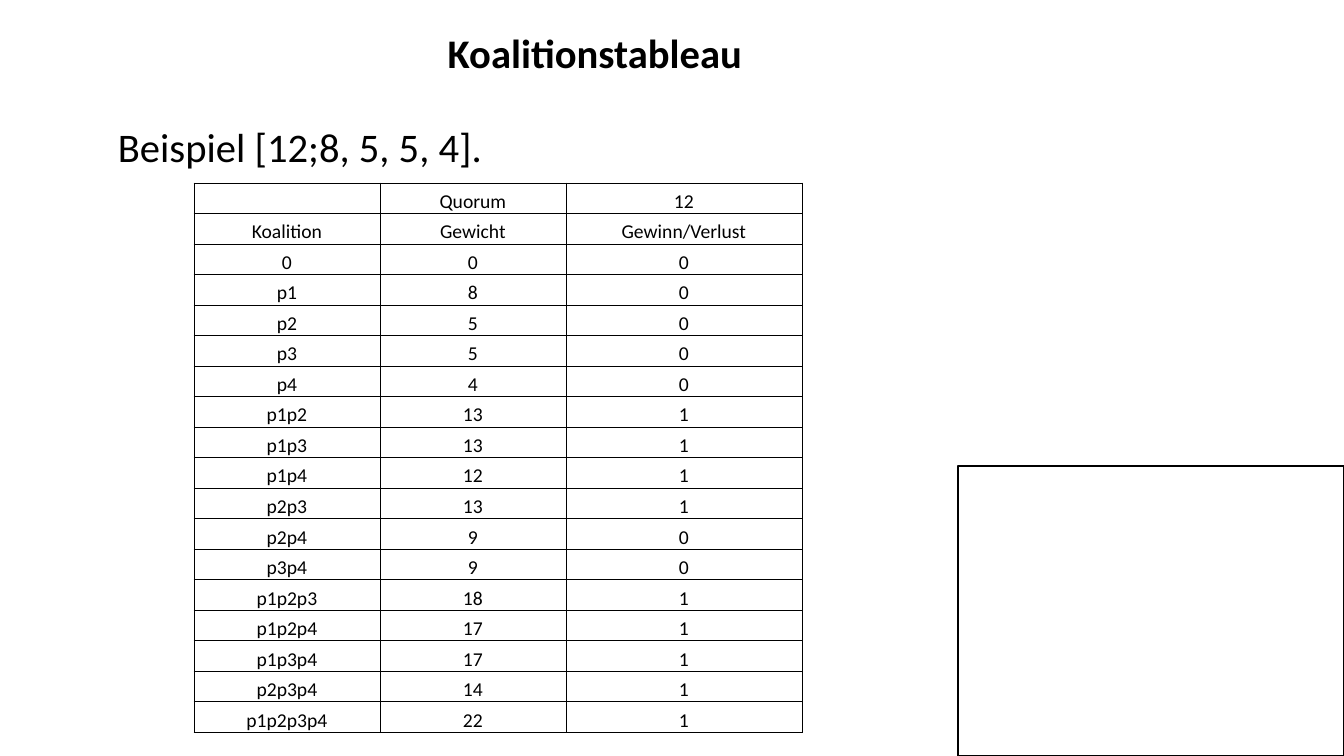
from lxml.etree import SubElement
from pptx import Presentation
from pptx.dml.color import RGBColor
from pptx.enum.shapes import MSO_SHAPE as Shape
from pptx.enum.text import MSO_ANCHOR as Anchor, PP_ALIGN as Align
from pptx.oxml.ns import qn
from pptx.util import Pt

# Content
TITLE = "Koalitionstableau"
EXAMPLE = "Beispiel [12;8, 5, 5, 4]."
ROWS = [
    ("", "Quorum", "12"),
    ("Koalition", "Gewicht", "Gewinn/Verlust"),
    ("0", "0", "0"),
    ("p1", "8", "0"),
    ("p2", "5", "0"),
    ("p3", "5", "0"),
    ("p4", "4", "0"),
    ("p1p2", "13", "1"),
    ("p1p3", "13", "1"),
    ("p1p4", "12", "1"),
    ("p2p3", "13", "1"),
    ("p2p4", "9", "0"),
    ("p3p4", "9", "0"),
    ("p1p2p3", "18", "1"),
    ("p1p2p4", "17", "1"),
    ("p1p3p4", "17", "1"),
    ("p2p3p4", "14", "1"),
    ("p1p2p3p4", "22", "1"),
]

# Layout in px: left, top, width, height
PAGE_SIZE = (1344, 756)
TITLE_BOX = (176, 11, 838, 82)
EXAMPLE_BOX = (108, 117, 745, 57)
FRAME_BOX = (958, 466, 386, 290)
COLUMN_WIDTHS = (186, 186, 236)
TABLE_BOX = (194, 183, sum(COLUMN_WIDTHS), 550)

FONT = "Calibri"
BLACK = RGBColor(0x00, 0x00, 0x00)
EMU_PER_PX = 914400 / 100.8


def px(length):
    return round(length * EMU_PER_PX)


def place(box):
    return [px(length) for length in box]


def style(font, size, bold=False):
    font.name, font.size, font.bold = FONT, Pt(size), bold
    font.color.rgb = BLACK


def set_margins(target, left, top, right, bottom):
    target.margin_left, target.margin_top = px(left), px(top)
    target.margin_right, target.margin_bottom = px(right), px(bottom)


def add_borders(cell, width):
    properties = cell._tc.get_or_add_tcPr()
    for index, side in enumerate(("a:lnL", "a:lnR", "a:lnT", "a:lnB")):
        line = SubElement(properties, qn(side), w=str(Pt(width)))
        fill = SubElement(line, qn("a:solidFill"))
        SubElement(fill, qn("a:srgbClr"), val=str(BLACK))
        properties.insert(index, line)


def main():
    deck = Presentation()
    deck.slide_width, deck.slide_height = place(PAGE_SIZE)
    page = deck.slides.add_slide(deck.slide_layouts[5])

    # Title
    title = page.shapes.title
    title.left, title.top, title.width, title.height = place(TITLE_BOX)
    title.text_frame.text = TITLE
    title.text_frame.vertical_anchor = Anchor.MIDDLE
    set_margins(title.text_frame, 9, 4, 9, 4)
    para = title.text_frame.paragraphs[0]
    para.alignment = Align.CENTER
    style(para.runs[0].font, 29, bold=True)

    # Example line
    example = page.shapes.add_textbox(*place(EXAMPLE_BOX)).text_frame
    example.word_wrap = True
    example.text = EXAMPLE
    style(example.paragraphs[0].runs[0].font, 29)

    # Empty frame
    frame = page.shapes.add_shape(Shape.RECTANGLE, *place(FRAME_BOX))
    frame.shadow.inherit = False
    frame.fill.background()
    frame.line.color.rgb = BLACK
    frame.line.width = Pt(1)

    # Coalition table
    table = page.shapes.add_table(
        len(ROWS), len(COLUMN_WIDTHS), *place(TABLE_BOX)).table
    table.first_row = table.horz_banding = False
    for column, width in zip(table.columns, COLUMN_WIDTHS):
        column.width = px(width)
    for row, values in zip(table.rows, ROWS):
        row.height = px(TABLE_BOX[3] / len(ROWS))
        for cell, value in zip(row.cells, values):
            cell.text_frame.text = value
            cell.vertical_anchor = Anchor.BOTTOM
            set_margins(cell, 1, 1, 1, 0)
            cell.fill.background()
            add_borders(cell, 0.5)
            para = cell.text_frame.paragraphs[0]
            para.alignment = Align.CENTER
            if para.runs:
                style(para.runs[0].font, 14)
            else:
                SubElement(para._p, qn("a:endParaRPr"), sz="1400")

    deck.save("out.pptx")


if __name__ == "__main__":
    main()
